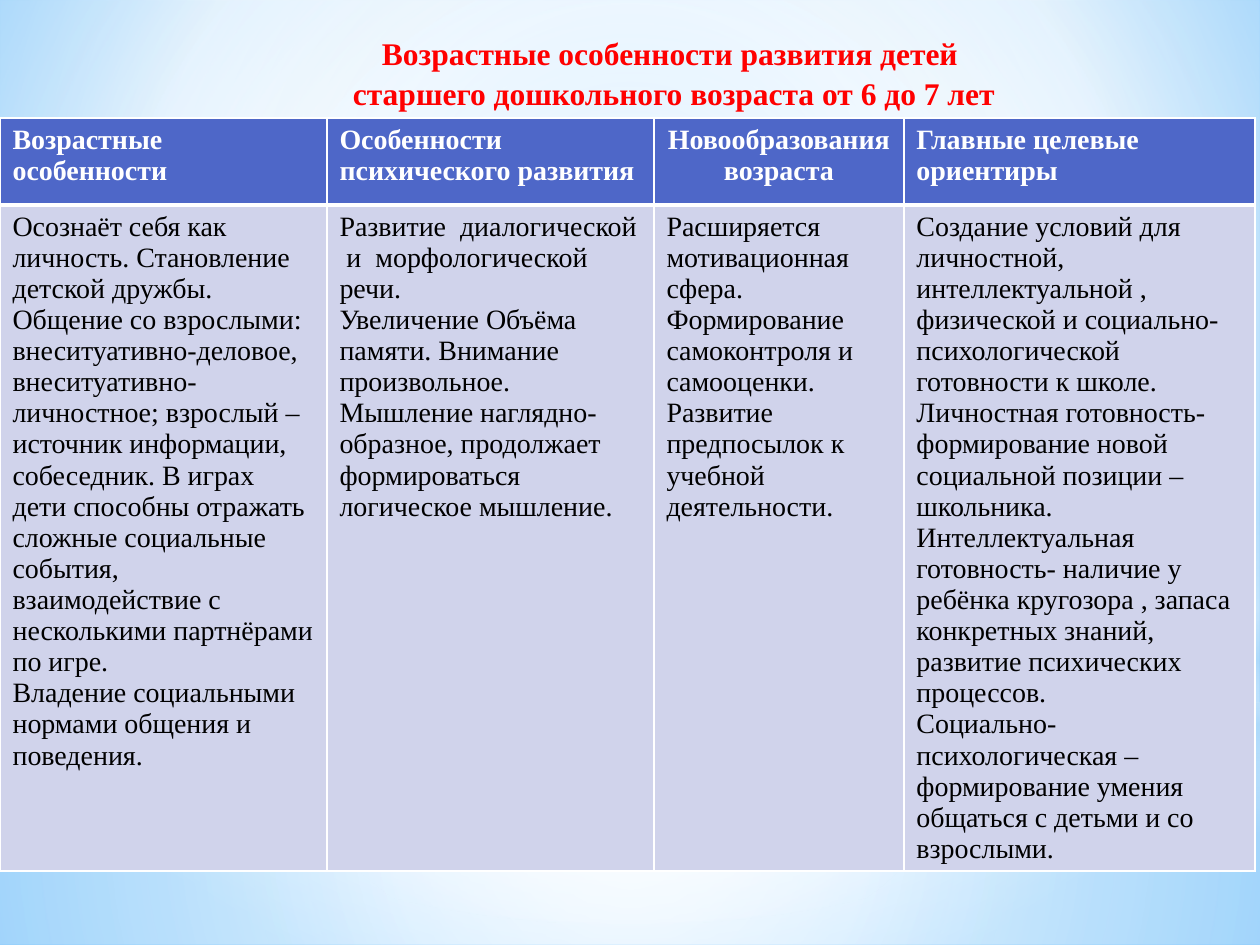
from lxml import etree
from pptx import Presentation
from pptx import util as u
from pptx.dml.color import RGBColor
from pptx.enum import shapes, text
from pptx.oxml.ns import qn

SCALE = 914400 / 126  # EMU per px
WIDTH, HEIGHT = 1260, 945


def px(length):
    return u.Emu(round(length * SCALE))


def color(hex_value):
    return RGBColor.from_string(hex_value)


class AgeSlide:
    font = "Times New Roman"
    accent, band, white, black, red = "4E67C8", "D0D3EB", "FFFFFF", "000000", "FF0000"

    def __init__(self, deck):
        self.slide = deck.slides.add_slide(deck.slide_layouts[5])

    def run(self, paragraph, words, size, hex_value, bold):
        run = paragraph.add_run()
        run.text = words
        run.font.name, run.font.size, run.font.bold = self.font, u.Pt(size), bold
        run.font.color.rgb = color(hex_value)

    def gradient(self, solid, stops, center=None):
        """Replace a solid fill by a gradient: circular round center, else vertical."""
        grad = etree.Element(qn("a:gradFill"), rotWithShape="1")
        stop_list = etree.SubElement(grad, qn("a:gsLst"))
        for position, hex_value, opacity in stops:
            stop = etree.SubElement(stop_list, qn("a:gs"), pos=str(position * 1000))
            tint = etree.SubElement(stop, qn("a:srgbClr"), val=hex_value)
            if opacity < 100:
                etree.SubElement(tint, qn("a:alpha"), val=str(opacity * 1000))
        if center:
            circle = etree.SubElement(grad, qn("a:path"), path="circle")
            sides = {side: str(part * 1000) for side, part in zip("ltrb", center)}
            etree.SubElement(circle, qn("a:fillToRect"), **sides)
        else:
            etree.SubElement(grad, qn("a:lin"), ang="5400000", scaled="0")
        solid.getparent().replace(solid, grad)

    def background(self, stops, center):
        self.slide.background.fill.solid()
        self.gradient(next(self.slide.element.iter(qn("a:solidFill"))), stops, center)

    def glow(self, kind, top, height, stops, center=None):
        shape = self.slide.shapes.add_shape(kind, 0, px(top), px(WIDTH), px(height))
        shape.shadow.inherit = False
        shape.line.fill.background()
        shape.fill.solid()
        self.gradient(shape.element.spPr.find(qn("a:solidFill")), stops, center)

    def title(self, box, lines):
        title = self.slide.shapes.title
        title.element.getparent().append(title.element)  # above the glows
        title.left, title.top, title.width, title.height = map(px, box)
        frame = title.text_frame
        frame.word_wrap = True
        frame.auto_size = text.MSO_AUTO_SIZE.NONE
        frame.vertical_anchor = text.MSO_ANCHOR.TOP
        paragraph = frame.paragraphs[0]
        paragraph.alignment = text.PP_ALIGN.CENTER
        paragraph.line_spacing = 1.05
        for index, line in enumerate(lines):
            if index:
                paragraph.add_line_break()
            self.run(paragraph, line, 18, self.red, True)

    def borders(self, cell, widths):
        properties = cell._tc.get_or_add_tcPr()
        for index, (side, width) in enumerate(zip("LRTB", widths)):
            line = etree.Element(qn(f"a:ln{side}"), w=str(u.Pt(width)))
            fill = etree.SubElement(line, qn("a:solidFill"))
            etree.SubElement(fill, qn("a:srgbClr"), val=self.white)
            properties.insert(index, line)

    def cell(self, cell, paragraphs, header, centered):
        cell.fill.solid()
        cell.fill.fore_color.rgb = color(self.accent if header else self.band)
        self.borders(cell, (1, 1, 1, 3) if header else (1, 1, 3, 1))
        frame = cell.text_frame
        for index, words in enumerate(paragraphs):
            paragraph = frame.add_paragraph() if index else frame.paragraphs[0]
            paragraph.alignment = text.PP_ALIGN.CENTER if centered else text.PP_ALIGN.LEFT
            self.run(paragraph, words, 16, self.white if header else self.black, header)

    def table(self, top, widths, heights, columns):
        table = self.slide.shapes.add_table(
            len(heights), len(widths), 0, px(top), px(sum(widths)), px(sum(heights))).table
        for row, height in zip(table.rows, heights):
            row.height = px(height)
        for number, (width, column) in enumerate(zip(widths, columns)):
            table.columns[number].width = px(width)
            for row, paragraphs in enumerate(column):
                header = row == 0
                self.cell(table.cell(row, number), paragraphs, header,
                          header and len(paragraphs) > 1)


# Each column: header paragraphs, then body paragraphs
COLUMNS = [
    (["Возрастные особенности"],
     ["Осознаёт себя как личность. Становление детской дружбы.",
      "Общение со взрослыми: внеситуативно-деловое, внеситуативно- личностное; "
      "взрослый – источник информации, собеседник. В играх дети способны отражать "
      "сложные социальные события, взаимодействие с несколькими партнёрами по игре.",
      "Владение социальными нормами общения и поведения."]),
    (["Особенности психического развития"],
     ["Развитие  диалогической  и  морфологической  речи.",
      "Увеличение Объёма памяти. Внимание  произвольное.",
      "Мышление наглядно-образное, продолжает формироваться логическое мышление."]),
    (["Новообразования ", "возраста"],
     ["Расширяется мотивационная сфера.",
      "Формирование самоконтроля и самооценки.",
      "Развитие предпосылок к учебной деятельности."]),
    (["Главные целевые ориентиры"],
     ["Создание условий для личностной, интеллектуальной , физической и "
      "социально-психологической  готовности к школе.",
      "Личностная готовность-формирование новой социальной позиции –школьника. "
      "Интеллектуальная готовность- наличие у ребёнка кругозора , запаса конкретных "
      "знаний, развитие психических процессов.",
      "Социально-психологическая –формирование умения общаться с детьми и со взрослыми."]),
]


def main():
    deck = Presentation()
    deck.slide_width, deck.slide_height = px(WIDTH), px(HEIGHT)
    page = AgeSlide(deck)
    white, sky = "FFFFFF", "B4DCFA"
    middle = (50, 50, 50, 50)
    rectangle, oval = shapes.MSO_SHAPE.RECTANGLE, shapes.MSO_SHAPE.OVAL

    # Sky backdrop
    page.background([(0, "9ED5FF", 100), (60, white, 100), (100, "5BB9FF", 100)],
                    (20, 10, 20, 60))
    horizon = 703
    page.glow(rectangle, horizon, HEIGHT - horizon,
              [(0, white, 91), (37, white, 76), (100, sky, 79)], middle)
    page.glow(rectangle, 0, horizon,
              [(0, white, 89), (48, white, 62), (100, sky, 79)], middle)
    page.glow(rectangle, 519, 315,
              [(0, white, 0), (29, white, 30), (45, sky, 40),
               (55, white, 26), (65, sky, 60), (100, white, 0)])
    page.glow(oval, 220, horizon, [(0, white, 100), (56, white, 0)], middle)

    # Heading and table
    page.title((102, 26, 1144, 234),
               ["Возрастные особенности развития детей ",
                "старшего дошкольного возраста от 6 до 7 лет"])
    page.table(118, (327, 327, 250, 351), (87, 632), COLUMNS)

    deck.save("out.pptx")


if __name__ == "__main__":
    main()
